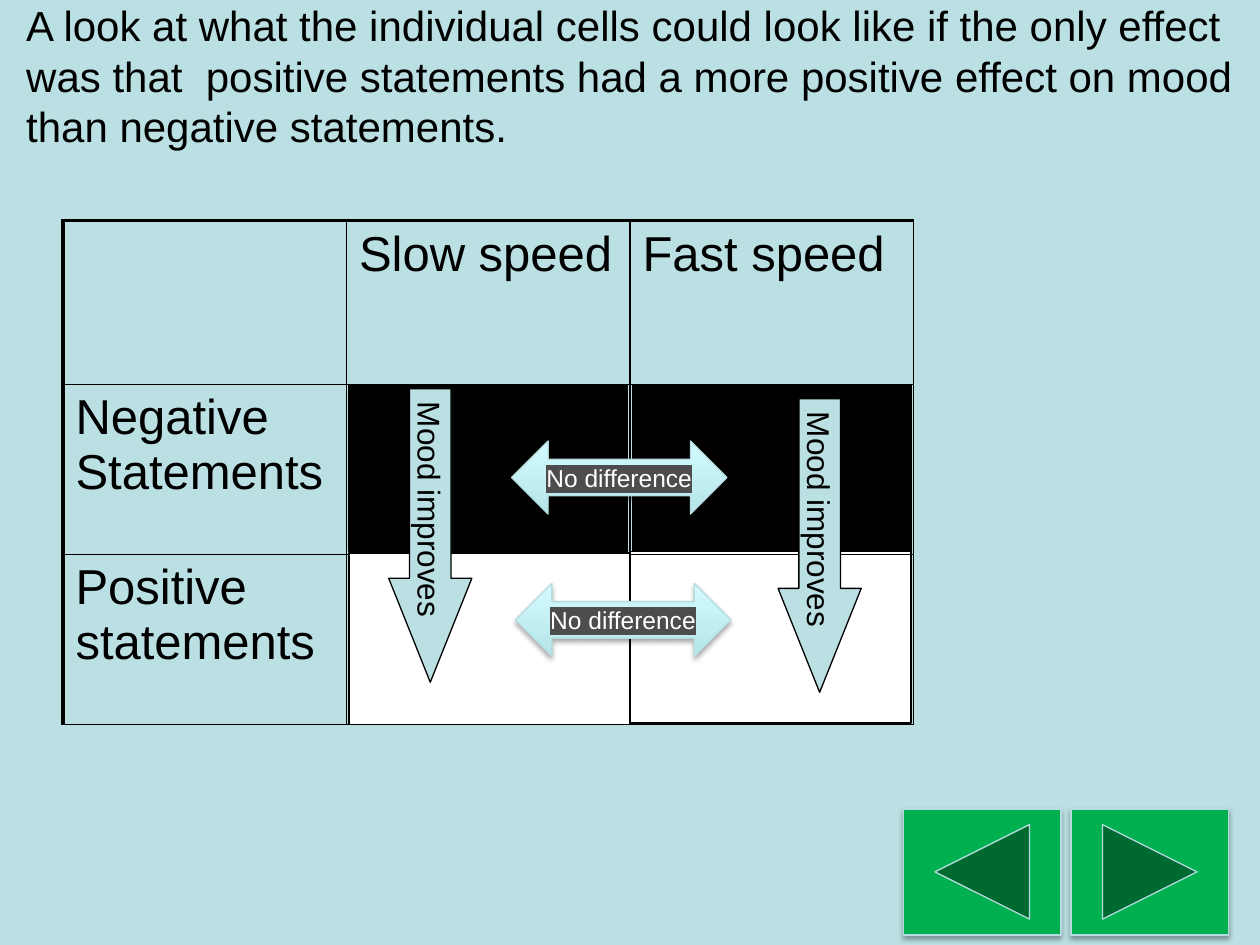
from dataclasses import dataclass

from lxml import etree
from pptx import Presentation
from pptx.dml.color import RGBColor
from pptx.enum.shapes import MSO_SHAPE
from pptx.enum.text import MSO_ANCHOR, PP_ALIGN
from pptx.oxml.ns import qn
from pptx.util import Inches, Pt

RECTANGLE = MSO_SHAPE.RECTANGLE
RIGHT_ARROW = MSO_SHAPE.RIGHT_ARROW
DOUBLE_ARROW = MSO_SHAPE.LEFT_RIGHT_ARROW
BACK_BUTTON = MSO_SHAPE.ACTION_BUTTON_BACK_OR_PREVIOUS
NEXT_BUTTON = MSO_SHAPE.ACTION_BUTTON_FORWARD_OR_NEXT
MIDDLE = MSO_ANCHOR.MIDDLE
CENTER = PP_ALIGN.CENTER


@dataclass(frozen=True)
class Theme:
    font: str = "Arial"
    background: str = "BBE0E3"
    black: str = "000000"
    white: str = "FFFFFF"
    green: str = "00B050"
    pale_line: str = "B6DCDF"
    gradient: tuple = ("B5E5E9", "D3FBFF")
    highlight: str = "4D4D4D"
    title_size: int = 24
    table_size: int = 28
    mood_size: int = 18
    difference_size: int = 14
    thin: float = 0.75
    border: float = 1
    thick_border: float = 2.25


THEME = Theme()
TITLE = (
    "A look at what the individual cells could look like if the only effect "
    "was that  positive statements had a more positive effect on mood than "
    "negative statements."
)
TABLE_ROWS = [
    ["", "Slow speed", "Fast speed"],
    ["Negative Statements", "", ""],
    ["Positive statements", "", ""],
]
ROW_HEIGHTS = [1.3, 1.35, 1.35]
COLUMN_WIDTH = 2.25


def rgb(color):
    return RGBColor.from_string(color)


def add_element(parent, tag, **attributes):
    names = {name: str(value) for name, value in attributes.items()}
    return etree.SubElement(parent, qn(tag), names)


def write_text(text_frame, text, size, color):
    text_frame.text = text
    paragraph = text_frame.paragraphs[0]
    for run in paragraph.runs:
        run.font.name = THEME.font
        run.font.size = Pt(size)
        run.font.color.rgb = rgb(color)
    return paragraph


def add_shape(slide, kind, box, fill=None, line=THEME.black):
    shape = slide.shapes.add_shape(kind, *map(Inches, box))
    shape.shadow.inherit = False
    if fill:
        shape.fill.solid()
        shape.fill.fore_color.rgb = rgb(fill)
    shape.line.color.rgb = rgb(line)
    shape.line.width = Pt(THEME.thin)
    return shape


def add_shadow(shape):
    """Put a soft shadow straight below the shape."""
    effects = shape.element.spPr.find(qn("a:effectLst"))
    shadow = add_element(effects, "a:outerShdw", blurRad=Pt(3.1), dist=Pt(1.8),
                         dir=90 * 60000, rotWithShape=0)
    color = add_element(shadow, "a:srgbClr", val=THEME.black)
    add_element(color, "a:alpha", val=35000)


def add_title(slide):
    title = slide.shapes.add_textbox(*map(Inches, (0.11, 0.2, 10, 1.25)))
    text_frame = title.text_frame
    text_frame.word_wrap = True
    text_frame.vertical_anchor = MIDDLE
    text_frame.margin_bottom = Inches(0.5)
    write_text(text_frame, TITLE, THEME.title_size, THEME.black)


def set_borders(cell, left, top):
    properties = cell._tc.get_or_add_tcPr()
    widths = {"L": left, "R": THEME.border, "T": top, "B": THEME.border}
    for index, (side, width) in enumerate(widths.items()):
        line = add_element(properties, f"a:ln{side}", w=Pt(width))
        fill = add_element(line, "a:solidFill")
        add_element(fill, "a:srgbClr", val=THEME.black)
        properties.insert(index, line)


def add_speed_table(slide):
    frame = slide.shapes.add_table(3, 3, *map(Inches, (0.5, 1.75, 6.75, 4)))
    table = frame.table
    table.first_row = table.horz_banding = False
    for column in table.columns:
        column.width = Inches(COLUMN_WIDTH)
    for i, (texts, height) in enumerate(zip(TABLE_ROWS, ROW_HEIGHTS)):
        table.rows[i].height = Inches(height)
        for j, text in enumerate(texts):
            cell = table.cell(i, j)
            cell.fill.background()
            set_borders(
                cell,
                left=THEME.border if j else THEME.thick_border,
                top=THEME.border if i else THEME.thick_border,
            )
            if text:
                write_text(cell.text_frame, text, THEME.table_size, THEME.black)


def add_mood_arrow(slide, left, top):
    arrow = add_shape(slide, RIGHT_ARROW, (left, top, 2.33, 0.66), THEME.background)
    arrow.rotation = 90
    arrow.adjustments[0] = 0.5
    arrow.adjustments[1] = 1.25
    text_frame = arrow.text_frame
    text_frame.word_wrap = False
    text_frame.vertical_anchor = MIDDLE
    paragraph = write_text(text_frame, "Mood improves", THEME.mood_size, THEME.black)
    paragraph.alignment = CENTER


def add_difference_arrow(slide, left, top):
    arrow = add_shape(slide, DOUBLE_ARROW, (left, top, 1.71, 0.58),
                      line=THEME.pale_line)
    arrow.fill.gradient()
    arrow.fill.gradient_angle = 90
    for stop, color in zip(arrow.fill.gradient_stops, THEME.gradient):
        stop.color.rgb = rgb(color)
    add_shadow(arrow)
    text_frame = arrow.text_frame
    text_frame.word_wrap = True
    text_frame.vertical_anchor = MIDDLE
    paragraph = write_text(text_frame, "No difference", THEME.difference_size,
                           THEME.white)
    paragraph.alignment = CENTER
    properties = paragraph.runs[0]._r.get_or_add_rPr()
    highlight = add_element(properties, "a:highlight")
    add_element(highlight, "a:srgbClr", val=THEME.highlight)
    properties.find(qn("a:solidFill")).addnext(highlight)


def add_button(slide, kind, left):
    button = add_shape(slide, kind, (left, 6.42, 1.25, 1), THEME.green,
                       THEME.pale_line)
    add_shadow(button)


def main():
    presentation = Presentation()
    presentation.slide_width = Inches(10)
    presentation.slide_height = Inches(7.5)
    slide = presentation.slides.add_slide(presentation.slide_layouts[6])
    slide.background.fill.solid()
    slide.background.fill.fore_color.rgb = rgb(THEME.background)

    add_shape(slide, RECTANGLE, (5, 4.38, 2.23, 1.36), THEME.white)
    add_title(slide)
    add_speed_table(slide)
    for left in (2.77, 2.77 + COLUMN_WIDTH):
        add_shape(slide, RECTANGLE, (left, 3.05, 2.21, 1.33), THEME.black)
    add_shape(slide, RECTANGLE, (2.77, 4.39, 2.23, 1.36), THEME.white)
    add_button(slide, NEXT_BUTTON, 8.5)
    for left, top in ((2.25, 3.92), (5.34, 4)):
        add_mood_arrow(slide, left, top)
    for left, top in ((4.06, 3.5), (4.09, 4.63)):
        add_difference_arrow(slide, left, top)
    add_button(slide, BACK_BUTTON, 7.17)

    presentation.save("out.pptx")


if __name__ == "__main__":
    main()
